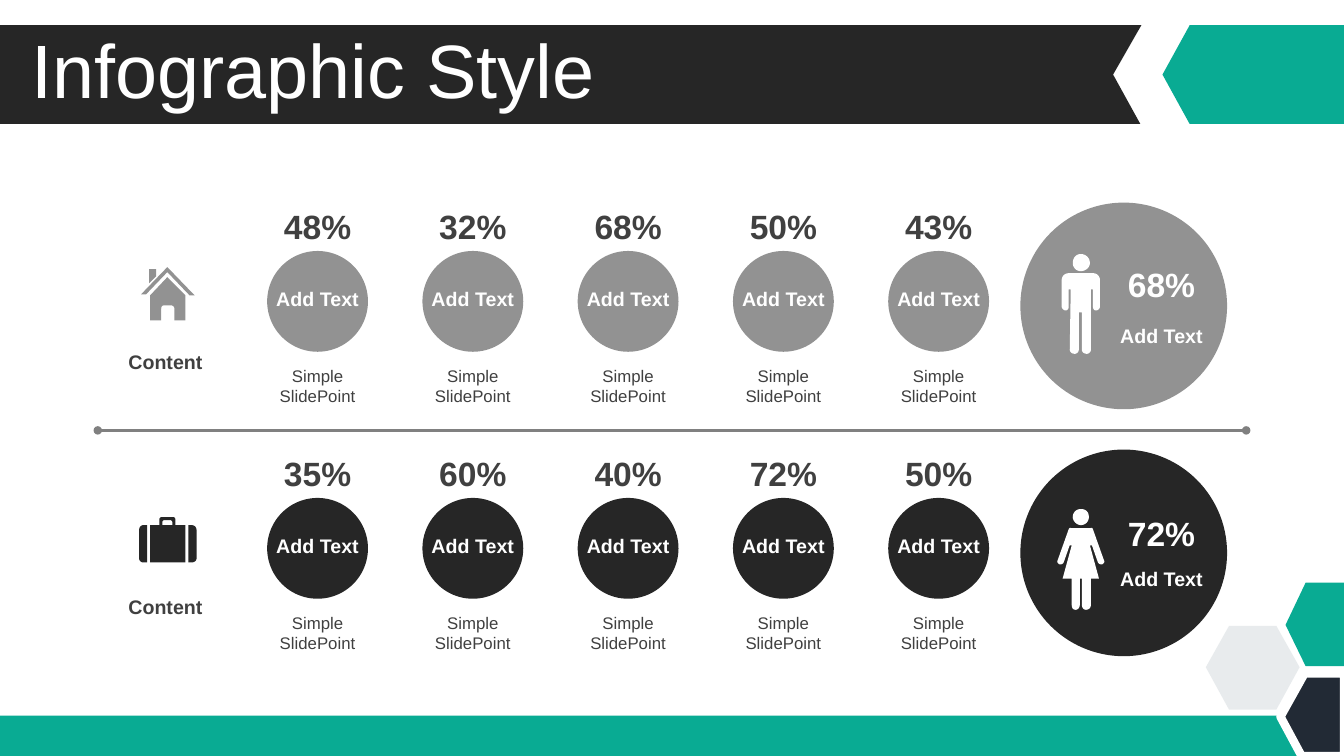
"""Builds the "Infographic Style" slide: two rows of percentages with summary circles."""
from lxml import etree
from pptx import Presentation, util as u
from pptx.dml.color import RGBColor
from pptx.enum import shapes as kinds, text as t
from pptx.oxml.ns import qn

COLORS = {"dark": "262626", "teal": "09AB93", "mist": "D9DEE2", "navy": "222A35",
          "gray": "929292", "text": "404040", "rule": "808080", "white": "FFFFFF"}
FONT = "Arial"
TITLE = "Infographic Style"
CIRCLE_TEXT, CAPTION, ROW_TEXT = "Add Text", "Simple SlidePoint", "Content"

# Outlines hold (x, y) corners and (x1, y1, x2, y2, x, y) curves, in inches.
BANNER = [[(0, 0.25), (11.32, 0.25), (11.04, 0.74), (11.31, 1.23), (0, 1.23)]]
BANNER_TIP = [[(13.33, 0.25), (13.33, 1.23), (11.8, 1.23), (11.53, 0.74), (11.8, 0.25)]]
MIST_HEXAGON = [[(11.96, 6.62), (12.19, 6.21), (12.66, 6.21), (12.89, 6.62),
                 (12.66, 7.04), (12.19, 7.04)]]
TEAL_HEXAGON = [[(12.95, 5.78), (13.33, 5.78), (13.33, 6.61), (12.95, 6.61), (12.75, 6.2)]]
NAVY_HEXAGON = [[(13.33, 6.68), (13.33, 7.5), (12.91, 7.5), (12.7, 7.11), (12.94, 6.68)]]
MAN = [
    [(10.6, 2.71), (10.84, 2.71), (10.88, 2.71, 10.91, 2.74, 10.91, 2.78), (10.91, 3.04),
     (10.91, 3.06, 10.89, 3.08, 10.87, 3.08), (10.85, 3.08, 10.84, 3.06, 10.84, 3.04),
     (10.84, 2.87), (10.82, 2.87), (10.82, 3.47), (10.82, 3.49, 10.8, 3.51, 10.78, 3.51),
     (10.75, 3.51, 10.73, 3.49, 10.73, 3.47), (10.73, 3.1), (10.7, 3.1), (10.7, 3.47),
     (10.7, 3.49, 10.68, 3.51, 10.66, 3.51), (10.63, 3.51, 10.61, 3.49, 10.61, 3.47),
     (10.62, 2.87), (10.6, 2.87), (10.6, 3.04), (10.6, 3.06, 10.59, 3.08, 10.57, 3.08),
     (10.55, 3.08, 10.53, 3.06, 10.53, 3.04), (10.53, 2.78),
     (10.53, 2.74, 10.56, 2.71, 10.6, 2.71)],
    [(10.72, 2.52), (10.77, 2.52, 10.81, 2.56, 10.81, 2.61),
     (10.81, 2.65, 10.77, 2.69, 10.72, 2.69), (10.67, 2.69, 10.64, 2.65, 10.64, 2.61),
     (10.64, 2.56, 10.67, 2.52, 10.72, 2.52)]]
WOMAN = [
    [(10.64, 5.24), (10.8, 5.24), (10.83, 5.24, 10.83, 5.23, 10.84, 5.25), (10.95, 5.56),
     (10.96, 5.57, 10.95, 5.59, 10.93, 5.6), (10.92, 5.6, 10.9, 5.6, 10.89, 5.58),
     (10.83, 5.41), (10.81, 5.41), (10.9, 5.74), (10.82, 5.74), (10.82, 6),
     (10.82, 6.03, 10.8, 6.05, 10.77, 6.05), (10.75, 6.05, 10.73, 6.03, 10.73, 6),
     (10.73, 5.74), (10.71, 5.74), (10.71, 6), (10.71, 6.03, 10.69, 6.05, 10.67, 6.05),
     (10.64, 6.05, 10.63, 6.03, 10.63, 6), (10.63, 5.74), (10.54, 5.74), (10.63, 5.41),
     (10.61, 5.41), (10.55, 5.58), (10.54, 5.6, 10.52, 5.6, 10.51, 5.6),
     (10.49, 5.59, 10.48, 5.57, 10.49, 5.56), (10.6, 5.25),
     (10.61, 5.23, 10.61, 5.24, 10.64, 5.24)],
    [(10.72, 5.05), (10.77, 5.05, 10.8, 5.08, 10.8, 5.13),
     (10.8, 5.17, 10.77, 5.21, 10.72, 5.21), (10.68, 5.21, 10.64, 5.17, 10.64, 5.13),
     (10.64, 5.08, 10.68, 5.05, 10.72, 5.05)]]
HOUSE = [
    [(1.66, 2.75), (1.84, 2.93), (1.84, 3.18), (1.73, 3.18), (1.73, 3.06),
     (1.73, 3.04, 1.71, 3.03, 1.7, 3.03), (1.63, 3.03), (1.61, 3.03, 1.6, 3.04, 1.6, 3.06),
     (1.6, 3.18), (1.49, 3.18), (1.49, 2.93)],
    [(1.48, 2.67), (1.55, 2.67), (1.55, 2.74), (1.48, 2.81)],
    [(1.66, 2.65), (1.93, 2.93), (1.88, 2.93), (1.66, 2.7), (1.45, 2.92), (1.4, 2.92)]]
SUITCASE = [
    [(1.87, 5.21), (1.9, 5.21), (1.93, 5.21, 1.95, 5.23, 1.95, 5.26), (1.95, 5.54),
     (1.95, 5.56, 1.93, 5.58, 1.9, 5.58), (1.87, 5.58)],
    [(1.42, 5.21), (1.46, 5.21), (1.46, 5.58), (1.42, 5.58),
     (1.4, 5.58, 1.38, 5.56, 1.38, 5.54), (1.38, 5.26), (1.38, 5.23, 1.4, 5.21, 1.42, 5.21)],
    [(1.63, 5.16), (1.62, 5.16, 1.61, 5.17, 1.61, 5.18), (1.61, 5.21), (1.71, 5.21),
     (1.71, 5.18), (1.71, 5.17, 1.7, 5.16, 1.69, 5.16)],
    [(1.61, 5.13), (1.72, 5.13), (1.73, 5.13, 1.74, 5.14, 1.74, 5.16), (1.74, 5.21),
     (1.84, 5.21), (1.84, 5.58), (1.49, 5.58), (1.49, 5.21), (1.58, 5.21), (1.58, 5.16),
     (1.58, 5.14, 1.59, 5.13, 1.61, 5.13)]]

ROWS = [
    {"top": 1.99, "color": "gray", "values": ["48%", "32%", "68%", "50%", "43%"],
     "icon": HOUSE, "row_text_top": 3.42, "person": MAN,
     "total": "68%", "total_top": 2.57, "total_text_top": 3.16},
    {"top": 4.44, "color": "dark", "values": ["35%", "60%", "40%", "72%", "50%"],
     "icon": SUITCASE, "row_text_top": 5.85, "person": WOMAN,
     "total": "72%", "total_top": 5.04, "total_text_top": 5.58}]
FIRST_CENTER, PITCH, TOTAL_TEXT_CENTER = 3.15, 1.54, 11.52


def rgb(color):
    return RGBColor.from_string(COLORS[color])


def paint(shape, color):
    shape.shadow.inherit = False
    shape.fill.solid()
    shape.fill.fore_color.rgb = rgb(color)
    shape.line.fill.background()
    return shape


def preset(slide, kind, left, top, width, height, color):
    box = map(u.Inches, (left, top, width, height))
    return paint(slide.shapes.add_shape(kind, *box), color)


def flatten(contour, steps=8):
    points = [contour[0]]
    for part in contour[1:]:
        if len(part) == 2:
            points.append(part)
            continue
        start, controls = points[-1], (part[:2], part[2:4], part[4:])
        for step in range(1, steps + 1):
            k = step / steps
            weights = ((1 - k) ** 3, 3 * k * (1 - k) ** 2, 3 * k * k * (1 - k), k ** 3)
            points.append(tuple(sum(w * p[axis] for w, p in zip(weights, (start, *controls)))
                                for axis in (0, 1)))
    return [(u.Inches(x), u.Inches(y)) for x, y in points]


def outline(slide, contours, color):
    first, *others = map(flatten, contours)
    builder = slide.shapes.build_freeform(*first[0])
    builder.add_line_segments(first[1:])
    for contour in others:
        builder.move_to(*contour[0])
        builder.add_line_segments(contour[1:])
    return paint(builder.convert_to_shape(), color)


def style(paragraph, size, color, bold, align):
    paragraph.alignment = align
    font = paragraph.font
    font.name, font.size, font.bold = FONT, u.Pt(size), bold
    font.color.rgb = rgb(color)


def label(slide, words, center, top, width, height, size, color="text", bold=True,
          align=t.PP_ALIGN.CENTER, anchor=t.MSO_ANCHOR.TOP):
    box = map(u.Inches, (center - width / 2, top, width, height))
    frame = slide.shapes.add_textbox(*box).text_frame
    frame.word_wrap = True
    frame.auto_size = t.MSO_AUTO_SIZE.SHAPE_TO_FIT_TEXT
    frame.vertical_anchor = anchor
    frame.text = words
    style(frame.paragraphs[0], size, color, bold, align)


def percent(slide, value, center, top, color="text"):
    label(slide, value, center, top, 1.02, 0.5, 24, color, anchor=t.MSO_ANCHOR.MIDDLE)


def add_frame(slide):
    outline(slide, BANNER, "dark")
    mist = outline(slide, MIST_HEXAGON, "mist")
    mist_color = mist.element.spPr.find(qn("a:solidFill"))[0]
    etree.SubElement(mist_color, qn("a:alpha"), val="60000")
    outline(slide, TEAL_HEXAGON, "teal")
    preset(slide, kinds.MSO_SHAPE.RECTANGLE, 0, 7.1, 13.33, 0.4, "teal")
    navy = outline(slide, NAVY_HEXAGON, "navy")
    navy.line.color.rgb = rgb("white")
    navy.line.width = u.Pt(6)
    outline(slide, BANNER_TIP, "teal")


def add_title(slide):
    title = slide.shapes.title
    title.left, title.top, title.width, title.height = map(u.Inches, (0.21, 0.34, 10.53, 0.79))
    title.text_frame.text = TITLE
    title.text_frame.vertical_anchor = t.MSO_ANCHOR.MIDDLE
    heading = title.text_frame.paragraphs[0]
    style(heading, 54, "white", False, t.PP_ALIGN.LEFT)
    heading.line_spacing = 0.9
    title.element.getparent().append(title.element)


def add_divider(slide):
    ends = map(u.Inches, (0.97, 4.27, 12.36, 4.27))
    divider = slide.shapes.add_connector(kinds.MSO_CONNECTOR.STRAIGHT, *ends)
    divider.line.color.rgb = rgb("rule")
    divider.line.width = u.Pt(2)
    for end in ("a:headEnd", "a:tailEnd"):
        etree.SubElement(divider.line._get_or_add_ln(), qn(end), type="oval")
    etree.SubElement(divider.element.spPr, qn("a:effectLst"))


def add_row(slide, row):
    top, color = row["top"], row["color"]
    outline(slide, row["icon"], color)
    label(slide, ROW_TEXT, 1.68, row["row_text_top"], 1.01, 0.34, 14,
          align=t.PP_ALIGN.LEFT, anchor=t.MSO_ANCHOR.MIDDLE)
    for column, value in enumerate(row["values"]):
        center = FIRST_CENTER + column * PITCH
        preset(slide, kinds.MSO_SHAPE.OVAL, center - 0.5, top + 0.5, 1, 1, color)
        percent(slide, value, center, top)
        label(slide, CIRCLE_TEXT, center, top + 0.81, 1.26, 0.34, 14, "white")
        label(slide, CAPTION, center, top + 1.59, 1.26, 0.5, 12, bold=False)
    preset(slide, kinds.MSO_SHAPE.OVAL, 10.12, top + 0.02, 2.05, 2.05, color)
    outline(slide, row["person"], "white")
    percent(slide, row["total"], TOTAL_TEXT_CENTER, row["total_top"], "white")
    label(slide, CIRCLE_TEXT, TOTAL_TEXT_CENTER, row["total_text_top"], 1.26, 0.34, 14, "white")


def main():
    deck = Presentation()
    deck.slide_width, deck.slide_height = u.Inches(13.33), u.Inches(7.5)
    slide = deck.slides.add_slide(deck.slide_layouts[5])
    add_frame(slide)
    add_title(slide)
    add_divider(slide)
    for row in ROWS:
        add_row(slide, row)
    deck.save("out.pptx")


if __name__ == "__main__":
    main()
